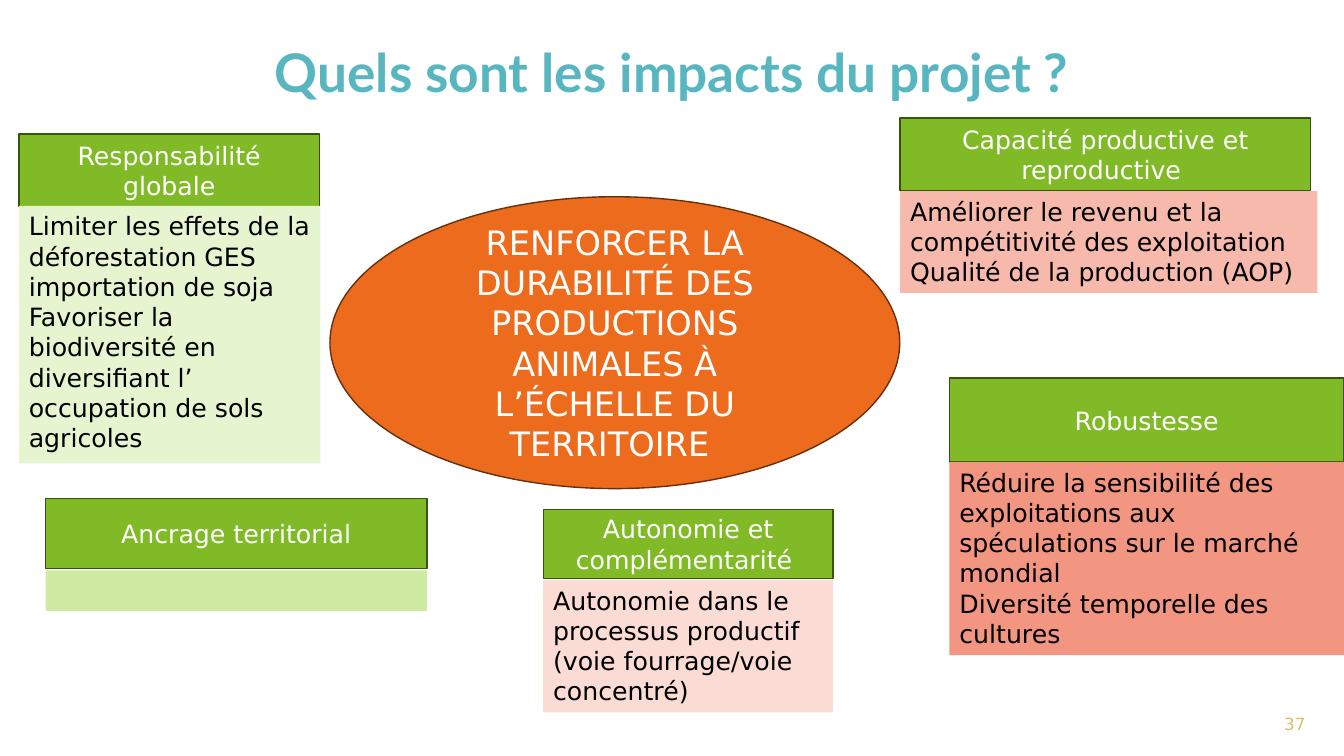
import pptx
import pptx.dml.color
import pptx.enum.shapes
import pptx.enum.text
import pptx.util

Pt = pptx.util.Pt
SHAPE = pptx.enum.shapes.MSO_SHAPE
ANCHOR = pptx.enum.text.MSO_ANCHOR
ALIGN = pptx.enum.text.PP_ALIGN
FONT = "DejaVu Sans"
GREEN, DARK_GREEN = "80BA27", "385211"
ORANGE, DARK_ORANGE = "ED6B1C", "682F0C"
WHITE, BLACK, TEAL, GOLD = "FFFFFF", "000000", "58B6C0", "DCBE69"

# Header text, header box, body text, body box height, body fill, gap, extra body width
IMPACTS = [
    ("Capacité productive et reproductive ", (643, 84.2, 293, 51.8),
     ["Améliorer le revenu et la compétitivité des exploitation",
      "Qualité de la production (AOP)"], 72.7, "F6B9AB", 0.6, 5),
    ("Autonomie et complémentarité ", (388, 363.8, 207, 49.5),
     ["Autonomie dans le processus productif (voie fourrage/voie concentré)"],
     94.5, "FBDCD5", 1, 0),
    ("Ancrage territorial", (32.5, 356.2, 272.5, 49.7), [], 29, "CEEBA1", 1.5, 0),
    ("Responsabilité globale", (13.5, 95.8, 214.8, 51.6),
     ["Limiter les effets de la déforestation GES importation de soja",
      "Favoriser la biodiversité en diversifiant l’ occupation de sols agricoles"],
     184, "E6F5D0", -0.4, 0.5),
    ("Robustesse", (678.2, 270, 281.8, 60),
     ["Réduire la sensibilité des exploitations aux spéculations sur le marché mondial",
      "Diversité temporelle des cultures"], 138, "F29581", 0, 0),
]


def rgb(color):
    return pptx.dml.color.RGBColor.from_string(color)


def write(frame, lines, size, color, align, anchor, name=FONT, bold=False):
    frame.word_wrap = True
    frame.vertical_anchor = anchor
    for index, line in enumerate(lines):
        para = frame.add_paragraph() if index else frame.paragraphs[0]
        para.alignment = align
        span = para.add_run()
        span.text = line
        span.font.name = name
        span.font.size = Pt(size)
        span.font.bold = bold
        span.font.color.rgb = rgb(color)


def add_block(page, kind, box, fill, outline=None):
    shape = page.shapes.add_shape(kind, *map(Pt, box))
    shape.shadow.inherit = False
    shape.fill.solid()
    shape.fill.fore_color.rgb = rgb(fill)
    if outline:
        shape.line.color.rgb = rgb(outline)
        shape.line.width = Pt(1)
    else:
        shape.line.fill.background()
    return shape


def add_title(page, box):
    title = page.shapes.title
    title.left, title.top, title.width, title.height = map(Pt, box)
    write(title.text_frame, ["Quels sont les impacts du projet ?"], 38, TEAL,
          ALIGN.CENTER, ANCHOR.MIDDLE, "Lato", True)
    title.text_frame.paragraphs[0].line_spacing = 0.9


def add_impact(page, heading, box, lines, body_height, body_fill, gap, extra_width):
    """Draw a green header with its tinted body below."""
    left, top, width, height = box
    header = add_block(page, SHAPE.RECTANGLE, box, GREEN, DARK_GREEN)
    write(header.text_frame, [heading], 18, WHITE, ALIGN.CENTER, ANCHOR.MIDDLE)
    body_box = (left, top + height + gap, width + extra_width, body_height)
    body = add_block(page, SHAPE.RECTANGLE, body_box, body_fill)
    write(body.text_frame, lines, 18, BLACK, ALIGN.LEFT, ANCHOR.TOP)


def add_goal(page, box):
    goal = add_block(page, SHAPE.OVAL, box, ORANGE, DARK_ORANGE)
    text = "RENFORCER LA DURABILITÉ DES PRODUCTIONS ANIMALES À L’ÉCHELLE DU TERRITOIRE "
    write(goal.text_frame, [text], 24, WHITE, ALIGN.CENTER, ANCHOR.MIDDLE)


def add_page_number(page, box):
    frame = page.shapes.add_textbox(*map(Pt, box)).text_frame
    frame.margin_left = frame.margin_right = frame.margin_top = frame.margin_bottom = 0
    write(frame, ["37"], 12, GOLD, ALIGN.LEFT, ANCHOR.MIDDLE)


def main():
    deck = pptx.Presentation()
    deck.slide_width, deck.slide_height = Pt(960), Pt(540)
    page = deck.slides.add_slide(deck.slide_layouts[5])
    add_title(page, (34, 15, 892, 77))
    for impact in IMPACTS:
        add_impact(page, *impact)
    add_goal(page, (235.7, 140.5, 407, 208.5))
    add_page_number(page, (917.3, 494.6, 42.5, 45.4))
    deck.save("out.pptx")


if __name__ == "__main__":
    main()
